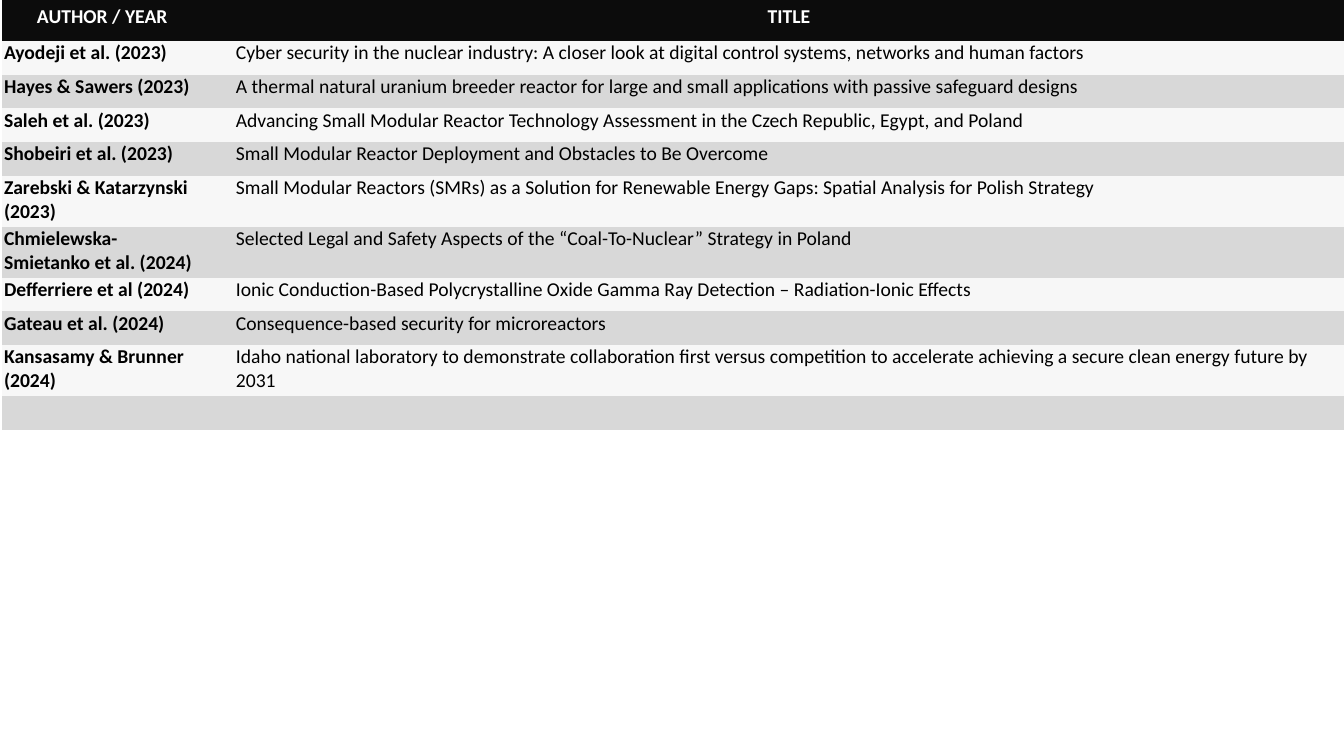
from typing import NamedTuple

from pptx import Presentation
from pptx.dml.color import RGBColor
from pptx.enum.text import PP_ALIGN
from pptx.oxml.ns import qn
from pptx.table import _Cell
from pptx.util import Inches, Pt

CENTER, LEFT = PP_ALIGN.CENTER, PP_ALIGN.LEFT
PLAIN_STYLE = "{2D5ABB26-0587-4C30-8999-92F81FD0307C}"
WIDTHS = (1.99, 0.31, 11.01)
BANDS = ("D8D8D8", "F7F7F7")


class Study(NamedTuple):
    author: str
    title: str
    height: float = 0.29


class Look(NamedTuple):
    fill: str
    ink: str
    align: PP_ALIGN
    insets: tuple[float, float, float, float]


STUDIES = (
    Study("Ayodeji et al. (2023)",
          "Cyber security in the nuclear industry: A closer look at digital "
          "control systems, networks and human factors"),
    Study("Hayes & Sawers (2023)",
          "A thermal natural uranium breeder reactor for large and small "
          "applications with passive safeguard designs"),
    Study("Saleh et al. (2023)",
          "Advancing Small Modular Reactor Technology Assessment in the "
          "Czech Republic, Egypt, and Poland"),
    Study("Shobeiri et al. (2023)",
          "Small Modular Reactor Deployment and Obstacles to Be Overcome", 0.18),
    Study("Zarebski & Katarzynski (2023)",
          "Small Modular Reactors (SMRs) as a Solution for Renewable Energy "
          "Gaps: Spatial Analysis for Polish Strategy"),
    Study("Chmielewska-Smietanko et al. (2024)",
          "Selected Legal and Safety Aspects of the “Coal-To-Nuclear” "
          "Strategy in Poland", 0.18),
    Study("Defferriere et al (2024)",
          "Ionic Conduction-Based Polycrystalline Oxide Gamma Ray Detection "
          "– Radiation-Ionic Effects"),
    Study("Gateau et al. (2024)",
          "Consequence-based security for microreactors", 0.18),
    Study("Kansasamy & Brunner (2024)",
          "Idaho national laboratory to demonstrate collaboration first versus "
          "competition to accelerate achieving a secure clean energy future by 2031"),
    Study("", "", 0.18),
)
HEAD = Study("AUTHOR / YEAR", "TITLE", 0.23)
HEAD_LOOK = Look("0C0C0C", "FFFFFF", CENTER, (0.05, 0.05, 0.05, 0.05))


def color(code: str) -> RGBColor:
    return RGBColor.from_string(code)


def body_look(row: int) -> Look:
    return Look(BANDS[row % 2], "000000", LEFT, (0.02, 0, 0.02, 0.03))


def fill_cell(cell: _Cell, text: str, look: Look, bold: bool) -> None:
    cell.fill.solid()
    cell.fill.fore_color.rgb = color(look.fill)
    (cell.margin_left, cell.margin_top,
     cell.margin_right, cell.margin_bottom) = map(Inches, look.insets)
    if not text:
        return
    cell.text = text
    para = cell.text_frame.paragraphs[0]
    para.alignment = look.align
    font = para.font
    font.name, font.size, font.bold = "Calibri", Pt(14), bold
    font.color.rgb = color(look.ink)


def main() -> None:
    deck = Presentation()
    deck.slide_width, deck.slide_height = Inches(13.33), Inches(7.5)
    slide = deck.slides.add_slide(deck.slide_layouts[6])

    rows = (HEAD, *STUDIES)
    high = sum(study.height for study in rows)
    table = slide.shapes.add_table(
        len(rows), len(WIDTHS), Inches(0.02), Inches(0),
        Inches(sum(WIDTHS)), Inches(high)).table
    table.first_row = table.horz_banding = False
    table._tbl.tblPr.find(qn("a:tableStyleId")).text = PLAIN_STYLE

    for column, width in zip(table.columns, WIDTHS):
        column.width = Inches(width)
    for row, study in enumerate(rows):
        table.rows[row].height = Inches(study.height)
        look = body_look(row) if row else HEAD_LOOK
        for col, text in enumerate((study.author, "", study.title)):
            fill_cell(table.cell(row, col), text, look, row == 0 or col == 0)

    deck.save("out.pptx")


if __name__ == "__main__":
    main()
